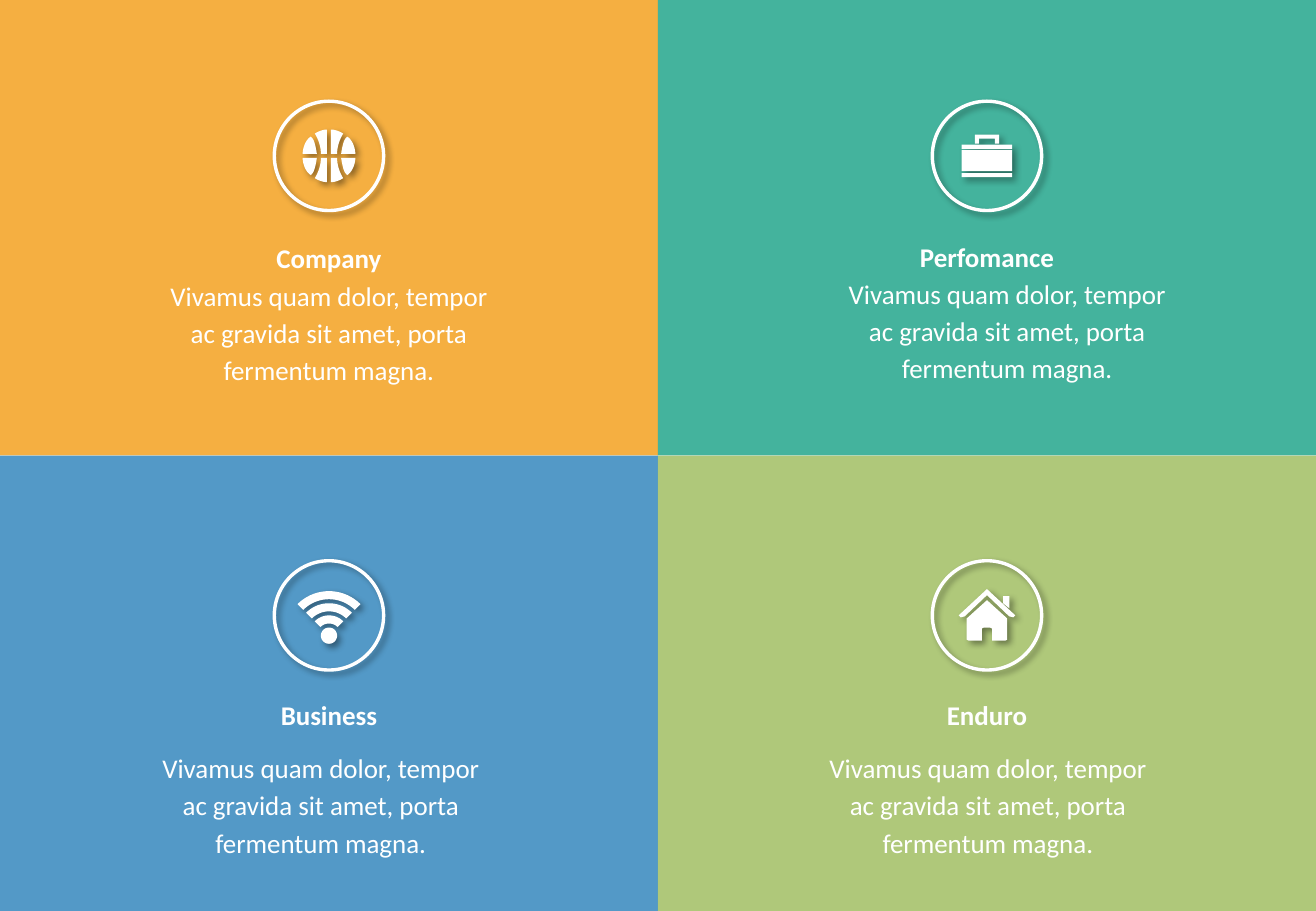
from math import cos, radians, sin

from lxml.etree import SubElement
from pptx import Presentation
from pptx.dml.color import RGBColor
from pptx.enum.shapes import MSO_SHAPE as Shape
from pptx.enum.text import MSO_AUTO_SIZE as AutoSize, PP_ALIGN as Align
from pptx.oxml.ns import qn
from pptx.util import Emu, Pt

PX = 7620
PANEL_W, PANEL_H = 650, 450
CIRCLE = 108
TITLE_W, TITLE_H = 305, 47
BODY_W, BODY_H = 360, 121
WHITE = "FFFFFF"
BODY = "Vivamus quam dolor, tempor ac gravida sit amet, porta fermentum magna."


def px(length):
    return Emu(round(length * PX))


def color(target, value):
    target.rgb = RGBColor.from_string(value)


def fill(shape, value):
    shape.fill.solid()
    color(shape.fill.fore_color, value)


def drop_shadow(shape):
    shape.shadow.inherit = False
    effects = shape.element.spPr.find(qn("a:effectLst"))
    shadow = SubElement(effects, qn("a:outerShdw"), blurRad="50800", dist="38100",
                        dir="2700000", algn="tl", rotWithShape="0")
    black = SubElement(shadow, qn("a:srgbClr"), val="000000")
    SubElement(black, qn("a:alpha"), val="40000")


def add_panel(slide, left, top, tint):
    panel = slide.shapes.add_shape(Shape.RECTANGLE, px(left), px(top), px(PANEL_W), px(PANEL_H))
    panel.shadow.inherit = False
    fill(panel, tint)
    panel.line.fill.background()
    solid = panel.element.spPr.find(qn("a:solidFill"))
    SubElement(solid[0], qn("a:alpha"), val="80000")


def add_circle(slide, x, y):
    circle = slide.shapes.add_shape(Shape.OVAL, px(x - CIRCLE / 2), px(y - CIRCLE / 2),
                                    px(CIRCLE), px(CIRCLE))
    circle.fill.background()
    color(circle.line.color, WHITE)
    circle.line.width = Pt(2)
    drop_shadow(circle)


def add_icon(slide, x, y, outlines):
    placed = [[(px(x + dx), px(y + dy)) for dx, dy in outline] for outline in outlines]
    builder = slide.shapes.build_freeform(*placed[0][0])
    for outline in placed:
        builder.move_to(*outline[0])
        builder.add_line_segments(outline[1:], close=True)
    icon = builder.convert_to_shape()
    fill(icon, WHITE)
    icon.line.fill.background()
    drop_shadow(icon)


def add_text(slide, left, top, width, height, words, bold=False):
    frame = slide.shapes.add_textbox(px(left), px(top), px(width), px(height)).text_frame
    frame.word_wrap = True
    frame.auto_size = AutoSize.SHAPE_TO_FIT_TEXT
    paragraph = frame.paragraphs[0]
    paragraph.alignment = Align.CENTER
    paragraph.line_spacing = 1.15
    paragraph.space_after = Pt(8.1)
    run = paragraph.add_run()
    run.text = words
    run.font.name = "Calibri"
    run.font.size = Pt(16)
    run.font.bold = bold
    color(run.font.color, WHITE)


def curve(a, b, c, d, steps=10):
    points = []
    for step in range(steps + 1):
        t = step / steps
        weights = ((1 - t) ** 3, 3 * t * (1 - t) ** 2, 3 * t * t * (1 - t), t ** 3)
        points.append(tuple(sum(w * p[axis] for w, p in zip(weights, (a, b, c, d)))
                            for axis in (0, 1)))
    return points


def arc(radius, start, end, center_y=20):
    step = 5 if end > start else -5
    return [(radius * cos(radians(angle)), center_y + radius * sin(radians(angle)))
            for angle in range(start, end + step, step)]


def box(left, top, right, bottom):
    return [(left, top), (right, top), (right, bottom), (left, bottom)]


def ball():
    inner = ([(2, -2)] + curve((2, -26), (6, -26), (11, -24), (14, -22))
             + curve((14, -22), (11, -17), (8, -10), (8, -2)))
    outer = (curve((18, -19), (14, -16), (13, -8), (12, -2))
             + curve((26, -2), (26, -8), (23, -16), (18, -19)))
    return [[(x * flip_x, y * flip_y) for x, y in piece]
            for piece in (inner, outer) for flip_x in (1, -1) for flip_y in (1, -1)]


def briefcase():
    handle = [(12, -12), (12, -21), (-12, -21), (-12, -12),
              (-8, -12), (-8, -17), (8, -17), (8, -12)]
    return [handle, box(-25, -11, 25, -7), box(-25, -6, 25, 15), box(-25, 17, 25, 21)]


def wireless():
    waves = [arc(far, 225, 315) + arc(near, 315, 225)
             for far, near in ((44, 36), (32, 24), (20, 12))]
    return waves + [arc(8, 0, 355)]


def house():
    walls = [(-20, 3), (-20, 24), (-18, 25), (-5, 25), (-5, 13), (-3, 12), (3, 12),
             (5, 13), (5, 25), (18, 25), (20, 24), (20, 3), (0, -15)]
    chimney = [(22, -19), (16, -19), (16, -12), (22, -7)]
    roof = [(-28, 0), (-26, 2), (-22, 1), (0, -20), (22, 1), (26, 2), (28, 0), (0, -26)]
    return [walls, chimney, roof]


def main():
    deck = Presentation()
    deck.slide_width, deck.slide_height = px(2 * PANEL_W), px(2 * PANEL_H)
    slide = deck.slides.add_slide(deck.slide_layouts[6])
    topics = [
        (0, 0, "F39C12", ball, 154, "Company", 228, 145, 265),
        (1, 0, "16A085", briefcase, 154, "Perfomance", 227, 815, 263),
        (0, 1, "2980B9", wireless, 608, "Business", 679, 137, 732),
        (1, 1, "9BBB59", house, 608, "Enduro", 679, 796, 732),
    ]
    for column, row, tint, outlines, icon_y, title, title_top, body_left, body_top in topics:
        left = column * PANEL_W
        middle = left + PANEL_W // 2
        add_panel(slide, left, row * PANEL_H, tint)
        add_circle(slide, middle, icon_y)
        add_icon(slide, middle, icon_y, outlines())
        add_text(slide, middle - TITLE_W / 2, title_top, TITLE_W, TITLE_H, title, bold=True)
        add_text(slide, body_left, body_top, BODY_W, BODY_H, BODY)
    deck.save("out.pptx")


if __name__ == "__main__":
    main()
